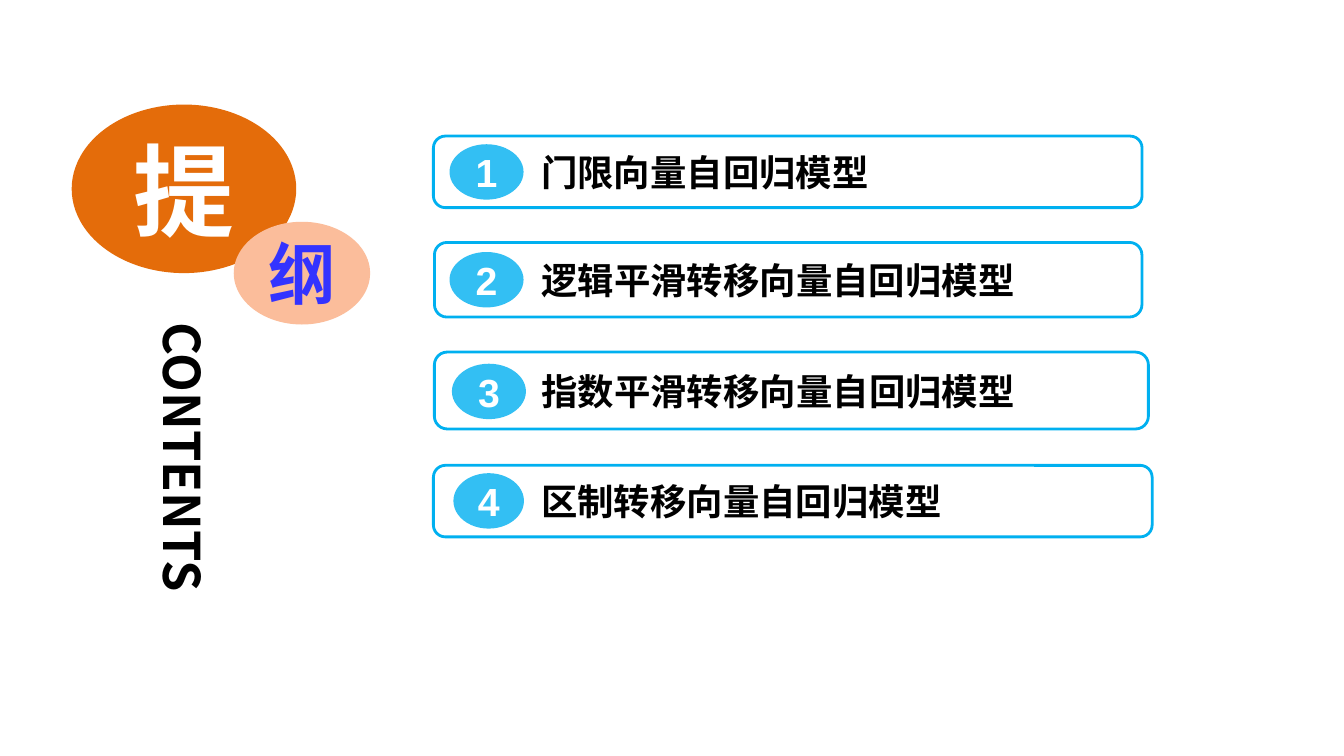
from dataclasses import dataclass

from lxml.etree import SubElement
from pptx import Presentation
from pptx.dml.color import RGBColor
from pptx.enum.shapes import MSO_SHAPE
from pptx.enum.text import MSO_ANCHOR, MSO_AUTO_SIZE, PP_ALIGN
from pptx.oxml.ns import qn
from pptx.shapes.autoshape import Shape
from pptx.slide import Slide
from pptx.util import Pt


@dataclass(frozen=True)
class Theme:
    chinese_font: str = "Noto Sans CJK SC"
    number_font: str = "Arial"
    white: str = "FFFFFF"
    black: str = "000000"
    blue: str = "00B0F0"
    orange: str = "E46C0A"
    peach: str = "FBBD9B"
    violet: str = "3333FF"
    large_size: float = 72
    medium_size: float = 48
    title_size: float = 36
    number_size: float = 28
    topic_size: float = 26
    badge_opacity: int = 80


@dataclass(frozen=True)
class Bounds:
    left: float
    top: float
    width: float
    height: float


@dataclass(frozen=True)
class Topic:
    text: str
    card: Bounds
    badge: Bounds


@dataclass(frozen=True)
class Emblem:
    text: str
    bounds: Bounds
    fill: str
    color: str
    size: float


THEME = Theme()
TOPIC_TEXT_LEFT = 384
TITLE_BOUNDS = Bounds(99.4, 230.4, 64, 216)

TOPICS = [
    Topic("门限向量自回归模型",
          Bounds(309.6, 97.2, 506.2, 51.1), Bounds(321.1, 103, 52.9, 39.6)),
    Topic("逻辑平滑转移向量自回归模型",
          Bounds(310.3, 173.2, 505.4, 53.3), Bounds(321.1, 180, 52.9, 39.6)),
    Topic("指数平滑转移向量自回归模型",
          Bounds(310.3, 251.5, 510, 54.9), Bounds(322.8, 259.8, 52.9, 39.6)),
    Topic("区制转移向量自回归模型",
          Bounds(309.6, 332.4, 513.4, 51.1), Bounds(323.9, 338, 50.4, 39.6)),
]

EMBLEMS = [
    Emblem("提", Bounds(51.2, 74.7, 160.4, 120.4),
           THEME.orange, THEME.white, THEME.large_size),
    Emblem("纲", Bounds(167, 158.4, 97.4, 73.4),
           THEME.peach, THEME.violet, THEME.medium_size),
]


def place(shape: Shape, bounds: Bounds) -> None:
    shape.left, shape.top = Pt(bounds.left), Pt(bounds.top)
    shape.width, shape.height = Pt(bounds.width), Pt(bounds.height)


def add_filled(page: Slide, kind: MSO_SHAPE, bounds: Bounds, fill: str) -> Shape:
    """Add a shape with a solid fill and neither outline nor shadow."""
    shape = page.shapes.add_shape(kind, 0, 0, 0, 0)
    place(shape, bounds)
    shape.shadow.inherit = False
    shape.fill.solid()
    shape.fill.fore_color.rgb = RGBColor.from_string(fill)
    shape.line.fill.background()
    return shape


def write(shape: Shape, text: str, font: str, size: float, color: str,
          align: PP_ALIGN = PP_ALIGN.CENTER, inset: float = 0) -> None:
    """Write one bold, vertically centred line; inset is the left margin."""
    frame = shape.text_frame
    frame.vertical_anchor = MSO_ANCHOR.MIDDLE
    frame.margin_left = Pt(inset)
    frame.margin_top = frame.margin_right = frame.margin_bottom = 0
    frame.text = text
    para = frame.paragraphs[0]
    para.alignment = align
    para.font.size = Pt(size)
    para.font.bold = True
    para.font.color.rgb = RGBColor.from_string(color)
    para.font.name = font
    properties = para._p.pPr.find(qn("a:defRPr"))
    SubElement(properties, qn("a:ea")).set("typeface", font)


def set_opacity(shape: Shape, percent: int) -> None:
    color = shape._element.spPr.find(qn("a:solidFill"))[0]
    SubElement(color, qn("a:alpha")).set("val", str(percent * 1000))


def add_topic(page: Slide, number: int, topic: Topic) -> None:
    card = add_filled(page, MSO_SHAPE.ROUNDED_RECTANGLE, topic.card, THEME.white)
    card.line.color.rgb = RGBColor.from_string(THEME.blue)
    card.line.width = Pt(2)
    write(card, topic.text, THEME.chinese_font, THEME.topic_size, THEME.black,
          PP_ALIGN.LEFT, TOPIC_TEXT_LEFT - topic.card.left)

    badge = add_filled(page, MSO_SHAPE.OVAL, topic.badge, THEME.blue)
    set_opacity(badge, THEME.badge_opacity)
    write(badge, str(number), THEME.number_font, THEME.number_size, THEME.white)
    badge.text_frame.word_wrap = False


def add_emblem(page: Slide, emblem: Emblem) -> None:
    oval = add_filled(page, MSO_SHAPE.OVAL, emblem.bounds, emblem.fill)
    write(oval, emblem.text, THEME.chinese_font, emblem.size, emblem.color)


def set_vertical_title(page: Slide, text: str) -> None:
    title = page.shapes.title
    place(title, TITLE_BOUNDS)
    write(title, text, THEME.chinese_font, THEME.title_size, THEME.black,
          PP_ALIGN.LEFT)
    title.text_frame.auto_size = MSO_AUTO_SIZE.NONE
    title.text_frame._txBody.bodyPr.set("vert", "eaVert")


def main() -> None:
    deck = Presentation()
    deck.slide_width, deck.slide_height = Pt(960), Pt(540)
    page = deck.slides.add_slide(deck.slide_layouts.get_by_name("Title Only"))
    for number, topic in enumerate(TOPICS, start=1):
        add_topic(page, number, topic)
    for emblem in EMBLEMS:
        add_emblem(page, emblem)
    set_vertical_title(page, "CONTENTS")
    deck.save("out.pptx")


if __name__ == "__main__":
    main()
